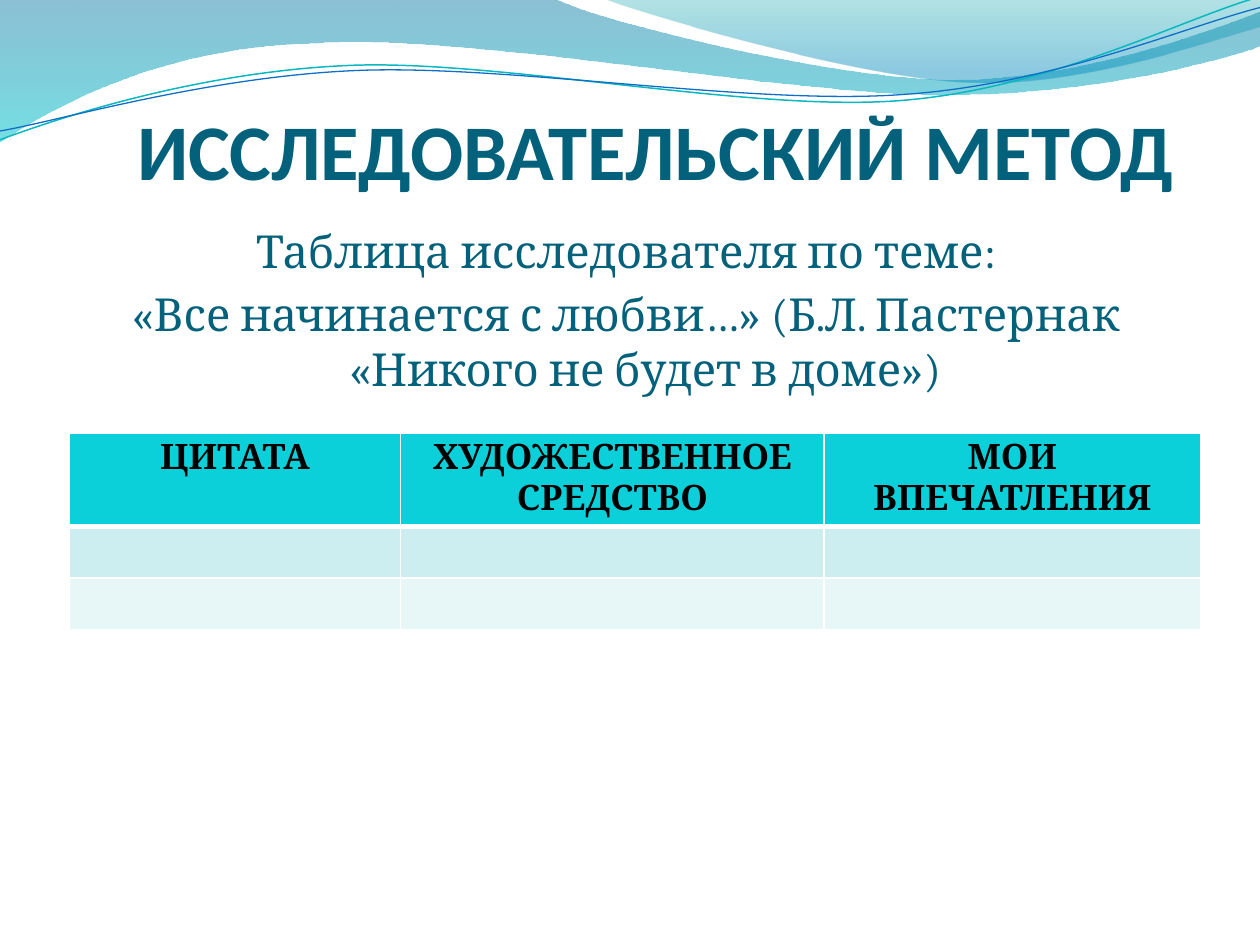
from lxml import etree
from pptx import Presentation
from pptx.dml.color import RGBColor
from pptx.enum.text import MSO_ANCHOR, MSO_AUTO_SIZE, PP_ALIGN
from pptx.oxml import parse_xml
from pptx.oxml.ns import qn
from pptx.util import Inches, Pt

TEAL = "04617B"
WHITE = "FFFFFF"
NS = 'xmlns:a="http://schemas.openxmlformats.org/drawingml/2006/main"'


def rgb(value):
    return RGBColor.from_string(value)


def add_curve(slide, start, segments, closed):
    """Draw an outline: each segment is an end point or a cubic Bezier."""
    points = [(Inches(seg[i]), Inches(seg[i + 1]))
              for seg in segments for i in range(0, len(seg), 2)]
    fb = slide.shapes.build_freeform(Inches(start[0]), Inches(start[1]))
    fb.add_line_segments(points, close=closed)
    sp = fb.convert_to_shape()
    sp.shadow.inherit = False
    # Join each three line steps of a Bezier segment into one curve step
    steps = iter(list(sp._element.spPr.iter(qn("a:lnTo"))))
    for seg in segments:
        first = next(steps)
        if len(seg) == 6:
            first.tag = qn("a:cubicBezTo")
            for _ in range(2):
                step = next(steps)
                first.append(step[0])
                step.getparent().remove(step)
    return sp


prs = Presentation()
prs.slide_width, prs.slide_height = Inches(10), Inches(7.5)
s = prs.slides.add_slide(prs.slide_layouts[5])

# Translucent waves: start, segments, gradient stops (position, colour, alpha %)
waves = [
    ((0, 0),
     [(4.4, -0.01), (4.76, 0.17, 6.64, 0.63, 7.58, 0.63),
      (8.53, 0.63, 9.58, 0.26, 10, 0.09), (10.01, 0.36),
      (9.83, 0.44, 8.7, 0.76, 7.46, 0.75), (6.22, 0.75, 3.82, 0.28, 2.57, 0.34),
      (1.29, 0.36, 0.46, 0.83, -0.01, 1.13)],
     [(0, "0074A1", 45), (1, "00C6CF", 55)]),
    ((4.79, -0.01),
     [(5.09, 0.11, 6.82, 0.62, 7.69, 0.65), (8.56, 0.69, 9.61, 0.32, 10, 0.21),
      (10, 0)],
     [(0, "00A1A9", 30), (0.8, "008BBF", 45)]),
]
for start, segments, stops in waves:
    sp = add_curve(s, start, segments, True)
    sp.line.fill.background()
    sp.fill.gradient()
    sp.fill.gradient_angle = 270
    for stop, (position, colour, _) in zip(sp.fill.gradient_stops, stops):
        stop.position = position
        stop.color.rgb = rgb(colour)
    for clr, (_, _, alpha) in zip(sp._element.spPr.iter(qn("a:srgbClr")), stops):
        etree.SubElement(clr, qn("a:alpha")).set("val", str(alpha * 1000))

# Thin wave lines
wave_lines = [
    ((0, 1.11),
     [(0.48, 0.93, 1.58, 0.57, 2.77, 0.52), (3.95, 0.47, 5.93, 0.89, 7.13, 0.8),
      (8.33, 0.71, 9.38, 0.15, 9.98, -0.02)], "0AB8BF", 0.85),
    ((0, 1.04),
     [(0.47, 0.96, 1.64, 0.61, 2.83, 0.56), (4.03, 0.51, 5.97, 0.84, 7.17, 0.75),
      (8.36, 0.67, 9.41, 0.21, 10, 0.06)], "0F6FC6", 0.75),
]
for start, segments, colour, width in wave_lines:
    sp = add_curve(s, start, segments, False)
    sp.fill.background()
    sp.line.color.rgb = rgb(colour)
    sp.line.width = Pt(width)

# Title
title = s.shapes.title
title.left, title.top = Inches(0.7), Inches(0.31)
title.width, title.height = Inches(9), Inches(1.25)
tf = title.text_frame
tf.text = "ИССЛЕДОВАТЕЛЬСКИЙ МЕТОД"
tf.auto_size = MSO_AUTO_SIZE.NONE
tf.vertical_anchor = MSO_ANCHOR.BOTTOM
tf.margin_left = tf.margin_right = tf.margin_bottom = 0
tf.margin_top = Inches(0.05)
p = tf.paragraphs[0]
p.alignment = PP_ALIGN.CENTER
p.font.name, p.font.size, p.font.bold = "Calibri", Pt(45), True
p.font.color.rgb = rgb(TEAL)

# Topic of the research table
tf = s.shapes.add_textbox(Inches(0.47), Inches(1.72), Inches(9), Inches(4.8)).text_frame
tf.word_wrap = True
topic = ["Таблица исследователя по теме:",
         "«Все начинается с любви…» (Б.Л. Пастернак «Никого не будет в доме»)"]
for i, text in enumerate(topic):
    p = tf.paragraphs[0] if i == 0 else tf.add_paragraph()
    p.text = text
    p.alignment = PP_ALIGN.CENTER
    if i:
        p.space_before = Pt(5)
    pPr = p._p.get_or_add_pPr()
    pPr.set("marL", str(Inches(0.3)))
    pPr.set("indent", str(Inches(-0.3)))
    p.font.name, p.font.size = "Cambria", Pt(26)
    p.font.color.rgb = rgb(TEAL)

# Research table
headers = ["ЦИТАТА", "ХУДОЖЕСТВЕННОЕ СРЕДСТВО", "МОИ ВПЕЧАТЛЕНИЯ"]
col_widths = [2.63, 3.36, 2.99]
row_heights = [0.73, 0.41, 0.41]
row_fills = ["0BD0D9", "CCEEF1", "E7F7F8"]
table = s.shapes.add_table(3, 3, Inches(0.55), Inches(3.44),
                           Inches(sum(col_widths)), Inches(sum(row_heights))).table
for col, width in zip(table.columns, col_widths):
    col.width = Inches(width)
for r, (row, height) in enumerate(zip(table.rows, row_heights)):
    row.height = Inches(height)
    for c, cell in enumerate(row.cells):
        tcPr = cell._tc.get_or_add_tcPr()
        for side in "LRTB":
            thick = (r, side) in [(0, "B"), (1, "T")]
            tcPr.append(parse_xml(
                f'<a:ln{side} {NS} w="{Pt(3 if thick else 1)}"><a:solidFill>'
                f'<a:srgbClr val="{WHITE}"/></a:solidFill></a:ln{side}>'))
        cell.fill.solid()
        cell.fill.fore_color.rgb = rgb(row_fills[r])
        if r == 0:
            cell.text = headers[c]
            cell.margin_top, cell.margin_bottom = Inches(0.04), Inches(0.03)
            p = cell.text_frame.paragraphs[0]
            p.alignment = PP_ALIGN.CENTER
            p.font.name, p.font.size, p.font.bold = "Cambria", Pt(20), True
            p.font.color.rgb = rgb("000000")

prs.save("out.pptx")
